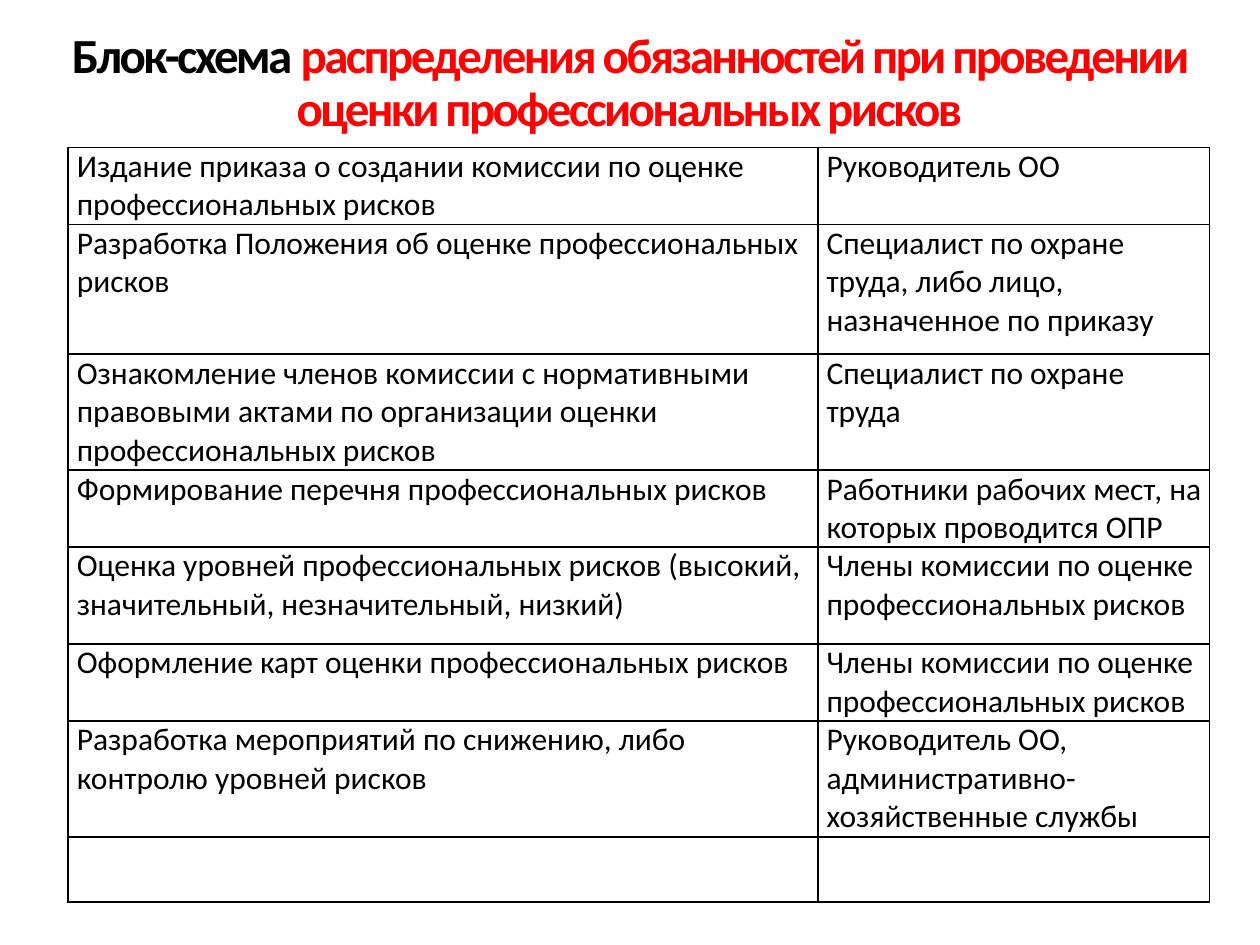
from lxml.etree import SubElement
from pptx import Presentation
from pptx.dml.color import RGBColor
from pptx.enum.text import MSO_ANCHOR, PP_ALIGN
from pptx.oxml.ns import qn
from pptx.util import Inches, Pt

COLORS = {"text": "000000", "accent": "FF0000", "border": "000000"}
FONT = "Calibri"
TITLE_BOX = (0.41, 0.25, 9.17, 0.85)
TABLE_BOX = (0.54, 1.17, 9.06, 5.99)
DUTY_SHARE = 5.95 / 9.06
ROW_HEIGHTS = [0.61, 1.03, 0.92, 0.61, 0.77, 0.61, 0.92, 0.52]

TITLE_RUNS = [
    ("Блок-схема", "text"),
    (" распределения обязанностей при проведении оценки профессиональных рисков", "accent"),
]
DUTIES = [
    ("Издание приказа о создании комиссии по оценке профессиональных рисков",
     "Руководитель ОО"),
    ("Разработка Положения об оценке профессиональных рисков",
     "Специалист по охране труда, либо лицо, назначенное по приказу"),
    ("Ознакомление членов комиссии с нормативными правовыми актами по организации "
     "оценки профессиональных рисков",
     "Специалист по охране труда"),
    ("Формирование перечня профессиональных рисков",
     "Работники рабочих мест, на которых проводится ОПР"),
    ("Оценка уровней профессиональных рисков (высокий, значительный, незначительный, низкий)",
     "Члены комиссии по оценке профессиональных рисков"),
    ("Оформление карт оценки профессиональных рисков",
     "Члены комиссии по оценке профессиональных рисков"),
    ("Разработка мероприятий по снижению, либо контролю уровней рисков",
     "Руководитель ОО, административно-хозяйственные службы"),
    ("", ""),
]


def add_run(paragraph, text, size, color, bold=False):
    run = paragraph.add_run()
    run.text = text
    run.font.name = FONT
    run.font.size = Pt(size)
    run.font.bold = bold
    run.font.color.rgb = RGBColor.from_string(COLORS[color])
    return run


def add_borders(cell):
    """Draw a thin line on all four sides; borders must precede the fill."""
    properties = cell._tc.get_or_add_tcPr()
    for position, side in enumerate(("a:lnL", "a:lnR", "a:lnT", "a:lnB")):
        line = SubElement(properties, qn(side), w=str(Pt(1)))
        fill = SubElement(line, qn("a:solidFill"))
        SubElement(fill, qn("a:srgbClr"), val=COLORS["border"])
        properties.insert(position, line)


def place_title(slide, box):
    title = slide.shapes.title
    title.left, title.top, title.width, title.height = map(Inches, box)
    frame = title.text_frame
    frame.margin_left = frame.margin_right = frame.margin_top = frame.margin_bottom = 0
    frame.word_wrap = True
    frame.vertical_anchor = MSO_ANCHOR.TOP
    heading = frame.paragraphs[0]
    heading.alignment = PP_ALIGN.CENTER
    heading.line_spacing = 0.9
    heading.space_before = Pt(0)
    for text, color in TITLE_RUNS:
        run = add_run(heading, text, 28, color, bold=True)
        run.font._element.set("spc", "-150")


def fill_cell(cell, text):
    cell.fill.background()
    add_borders(cell)
    cell.margin_left, cell.margin_right = Inches(0.07), Inches(0.05)
    cell.margin_top = cell.margin_bottom = 0
    cell.vertical_anchor = MSO_ANCHOR.TOP
    if text:
        add_run(cell.text_frame.paragraphs[0], text, 18, "text")


def place_duties(slide, box):
    frame = slide.shapes.add_table(len(DUTIES), 2, *map(Inches, box))
    table = frame.table
    table.first_row = table.horz_banding = False
    width = box[2]
    for column, share in zip(table.columns, (DUTY_SHARE, 1 - DUTY_SHARE)):
        column.width = Inches(width * share)
    for row, height, texts in zip(table.rows, ROW_HEIGHTS, DUTIES):
        row.height = Inches(height)
        for cell, text in zip(row.cells, texts):
            fill_cell(cell, text)


def main():
    deck = Presentation()
    deck.slide_width, deck.slide_height = Inches(10), Inches(7.5)
    slide = deck.slides.add_slide(deck.slide_layouts[5])
    # Heading above, duties and responsible persons below
    place_title(slide, TITLE_BOX)
    place_duties(slide, TABLE_BOX)
    deck.save("out.pptx")


if __name__ == "__main__":
    main()
